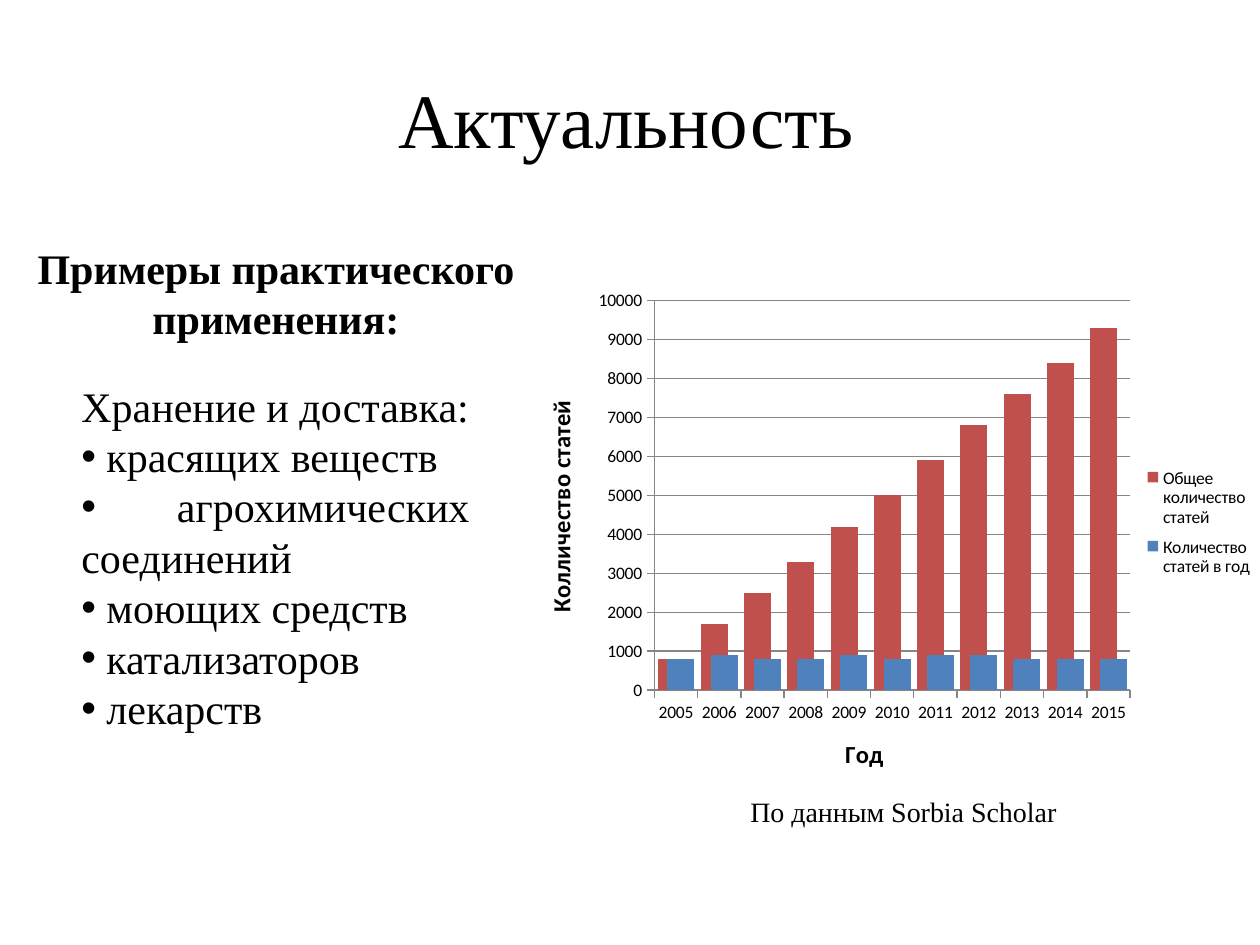
import pptx
import pptx.util
import pptx.chart.data
import pptx.dml.color
import pptx.enum.chart
import pptx.enum.text
import pptx.oxml
import pptx.oxml.ns
import lxml.etree

SCALE = 914400 / 126
COLORS = {"text": "000000", "total": "C0504D", "yearly": "4F81BD", "grid": "868686"}
SERIF = "Times New Roman"
ALIGN = pptx.enum.text.PP_ALIGN
YEARS = [str(year) for year in range(2005, 2016)]
SERIES = [
    ("Общее количество статей", "total",
     [800, 1700, 2500, 3300, 4200, 5000, 5900, 6800, 7600, 8400, 9300]),
    ("Количество статей в год", "yearly",
     [800, 900, 800, 800, 900, 800, 900, 900, 800, 800, 800]),
]
USES = ["красящих веществ", "агрохимических соединений", "моющих средств",
        "катализаторов", "лекарств"]


def px(value):
    return round(value * SCALE)


def color(name):
    return pptx.dml.color.RGBColor.from_string(COLORS[name])


def style_font(font, size, name, bold=False):
    font.size = pptx.util.Pt(size)
    font.name = name
    font.bold = bold
    font.color.rgb = color("text")


def add_bullet(paragraph):
    properties = paragraph._p.get_or_add_pPr()
    properties.set("marL", "0")
    properties.set("indent", "0")
    for tag, attribute, value in (("a:buFont", "typeface", "Arial"), ("a:buChar", "char", "•")):
        element = lxml.etree.SubElement(properties, pptx.oxml.ns.qn(tag))
        element.set(attribute, value)


def add_text(slide, box, lines, size, alignment, bold=False, middle=False):
    shape = slide.shapes.add_textbox(*map(px, box))
    frame = shape.text_frame
    frame.word_wrap = True
    if middle:
        frame.vertical_anchor = pptx.enum.text.MSO_ANCHOR.MIDDLE
    for index, (text, bullet) in enumerate(lines):
        paragraph = frame.add_paragraph() if index else frame.paragraphs[0]
        paragraph.alignment = alignment
        if bullet:
            add_bullet(paragraph)
        run = paragraph.add_run()
        run.text = text
        style_font(run.font, size, SERIF, bold)


def add_examples(slide, box):
    left, top, width, height = box
    add_text(slide, (left, top, width, 115),
             [("Примеры практического применения:", False)], 24, ALIGN.CENTER, bold=True)
    lines = [("Хранение и доставка:", False)] + [(" " + use, True) for use in USES]
    add_text(slide, (left + 69, top + 138, 413, height - 138), lines, 24, ALIGN.JUSTIFY)


def style_axis(axis, title):
    axis.major_tick_mark = pptx.enum.chart.XL_TICK_MARK.OUTSIDE
    axis.format.line.color.rgb = color("grid")
    style_font(axis.tick_labels.font, 10, "Calibri")
    run = axis.axis_title.text_frame.paragraphs[0].add_run()
    run.text = title
    style_font(run.font, 14, "Calibri", True)


def set_layout(parent, position, box, target=()):
    for old in parent.findall(pptx.oxml.ns.qn("c:layout")):
        parent.remove(old)
    layout = lxml.etree.Element(pptx.oxml.ns.qn("c:layout"))
    manual = lxml.etree.SubElement(layout, pptx.oxml.ns.qn("c:manualLayout"))
    settings = [*target, ("xMode", "edge"), ("yMode", "edge"), *zip("xywh", box)]
    for tag, value in settings:
        lxml.etree.SubElement(manual, pptx.oxml.ns.qn("c:" + tag)).set("val", str(value))
    parent.insert(position, layout)


def add_article_chart(slide, box):
    data = pptx.chart.data.CategoryChartData()
    data.categories = YEARS
    for name, _, values in SERIES:
        data.add_series(name, values)
    kind = pptx.enum.chart.XL_CHART_TYPE.COLUMN_CLUSTERED
    chart = slide.shapes.add_chart(kind, *map(px, box), data).chart
    chart.has_title = False
    style_font(chart.font, 10, "Calibri")
    chart.has_legend = True
    chart.legend.position = pptx.enum.chart.XL_LEGEND_POSITION.RIGHT
    chart.legend.include_in_layout = False
    style_font(chart.legend.font, 10, "Calibri")
    plot = chart.plots[0]
    plot.gap_width = 24
    plot.overlap = 64
    plot.vary_by_categories = False
    for series, (_, fill, _) in zip(plot.series, SERIES):
        series.format.fill.solid()
        series.format.fill.fore_color.rgb = color(fill)
    style_axis(chart.category_axis, "Год")
    style_axis(chart.value_axis, "Колличество статей")
    chart.value_axis.minimum_scale = 0
    chart.value_axis.maximum_scale = 10000
    chart.value_axis.major_unit = 1000
    chart.value_axis.major_gridlines.format.line.color.rgb = color("grid")
    chart_element = chart._chartSpace.chart
    set_layout(chart_element.plotArea, 0, (0.16, 0.03, 0.66, 0.79), [("layoutTarget", "inner")])
    legend_element = chart_element.find(pptx.oxml.ns.qn("c:legend"))
    set_layout(legend_element, 1, (0.83, 0.35, 0.17, 0.26))


def build_slide(presentation):
    slide = presentation.slides.add_slide(presentation.slide_layouts[6])
    add_text(slide, (59, 39, 1134, 158), [("Актуальность", False)], 44, ALIGN.CENTER, middle=True)
    add_examples(slide, (0, 236, 552, 507))
    add_article_chart(slide, (539, 286, 721, 493))
    add_text(slide, (738, 788, 364, 47), [("По данным Sorbia Scholar", False)], 16, ALIGN.LEFT)


def main():
    presentation = pptx.Presentation()
    presentation.slide_width = px(1260)
    presentation.slide_height = px(945)
    build_slide(presentation)
    presentation.save("out.pptx")


if __name__ == "__main__":
    main()
